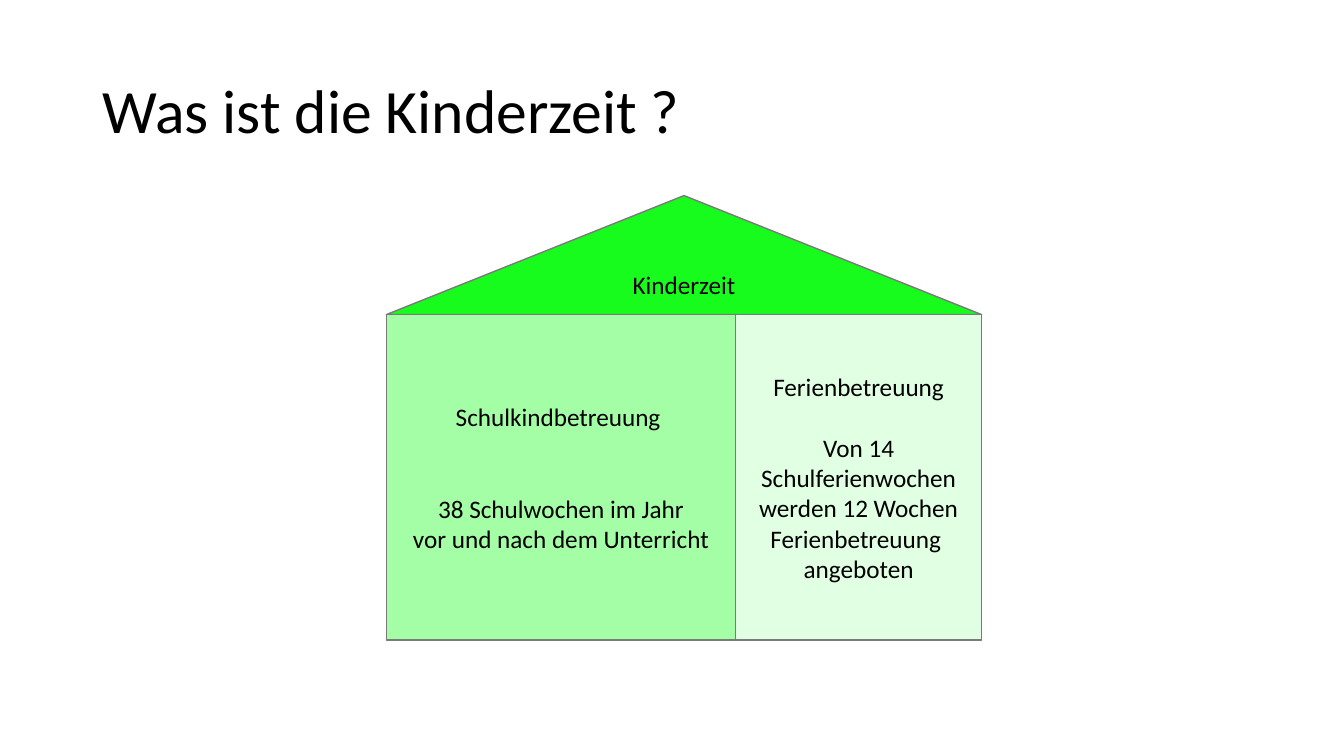
import pptx
import pptx.dml.color
import pptx.enum.shapes
import pptx.enum.text
import pptx.util

Pt = pptx.util.Pt
Align = pptx.enum.text.PP_ALIGN
Anchor = pptx.enum.text.MSO_ANCHOR
Shape = pptx.enum.shapes.MSO_SHAPE

COLORS = {
    "text": "000000",
    "outline": "7A7A7A",
    "roof": "18FC1D",
    "school": "A4FEA6",
    "holiday": "E1FFE2",
}


class HouseSlide:
    """Hold the slide and its style, and draw the title and house blocks."""

    font_name = "Calibri"
    text_size = 18
    line_height = 22

    def __init__(self, presentation):
        self.slide = presentation.slides.add_slide(presentation.slide_layouts[5])

    def color(self, name):
        return pptx.dml.color.RGBColor.from_string(COLORS[name])

    def format_paragraph(self, paragraph, size, alignment):
        paragraph.alignment = alignment
        paragraph.font.name = self.font_name
        paragraph.font.size = Pt(size)
        paragraph.font.color.rgb = self.color("text")

    def add_title(self, text, left, top, width, height):
        title = self.slide.shapes.title
        title.left, title.top = Pt(left), Pt(top)
        title.width, title.height = Pt(width), Pt(height)
        frame = title.text_frame
        frame.text = text
        frame.auto_size = pptx.enum.text.MSO_AUTO_SIZE.NONE
        frame.vertical_anchor = Anchor.MIDDLE
        paragraph = frame.paragraphs[0]
        paragraph.line_spacing = 0.9
        self.format_paragraph(paragraph, 44, Align.LEFT)

    def add_block(self, kind, fill, left, top, width, height, lines, gap=0):
        shape = self.slide.shapes.add_shape(
            kind, Pt(left), Pt(top), Pt(width), Pt(height))
        shape.shadow.inherit = False
        shape.fill.solid()
        shape.fill.fore_color.rgb = self.color(fill)
        shape.line.color.rgb = self.color("outline")
        shape.line.width = Pt(1)
        frame = shape.text_frame
        frame.word_wrap = True
        frame.vertical_anchor = Anchor.MIDDLE
        frame.text = "\n".join(lines)
        for index, paragraph in enumerate(frame.paragraphs):
            self.format_paragraph(paragraph, self.text_size, Align.CENTER)
            if index == 1:
                paragraph.space_before = Pt(gap * self.line_height)


def main():
    presentation = pptx.Presentation()
    presentation.slide_width, presentation.slide_height = Pt(960), Pt(540)
    house = HouseSlide(presentation)
    house.add_title("Was ist die Kinderzeit ?", 66, 28.75, 828, 104.4)

    left, roof_top, roof_height, wall_height = 276, 139.7, 85, 232.6
    school_width, holiday_width = 249.5, 175.7
    wall_top = roof_top + roof_height
    house.add_block(Shape.ISOSCELES_TRIANGLE, "roof", left, roof_top,
                    school_width + holiday_width, roof_height, ["Kinderzeit"])
    house.add_block(Shape.RECTANGLE, "school", left, wall_top,
                    school_width, wall_height,
                    ["Schulkindbetreuung ", "38 Schulwochen im Jahr",
                     "vor und nach dem Unterricht"], gap=2)
    house.add_block(Shape.RECTANGLE, "holiday", left + school_width, wall_top,
                    holiday_width, wall_height,
                    ["Ferienbetreuung",
                     "Von 14 Schulferienwochen werden 12 Wochen Ferienbetreuung ",
                     "angeboten"], gap=1)
    presentation.save("out.pptx")


if __name__ == "__main__":
    main()
